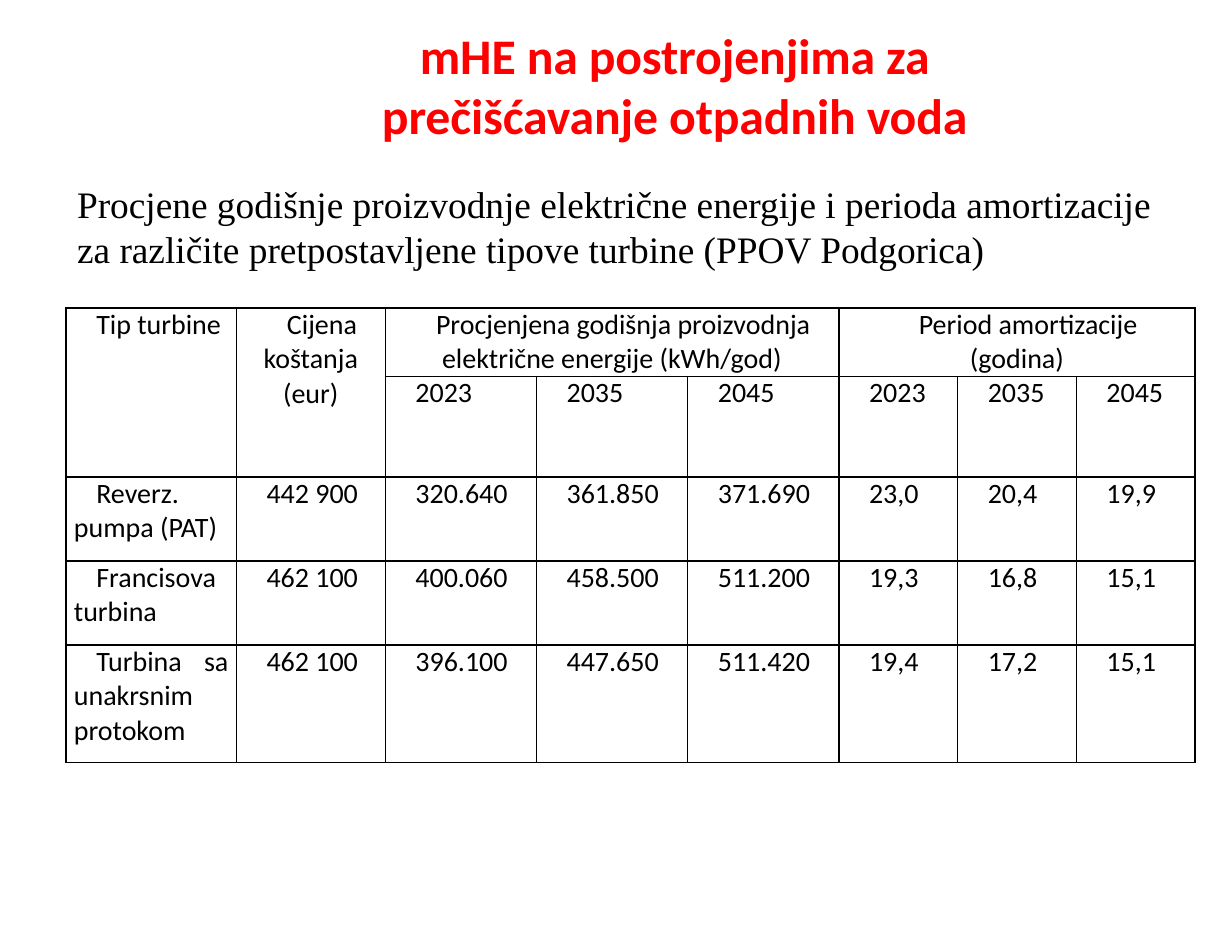
from pptx import Presentation
from pptx.dml.color import RGBColor as RGB
from pptx.enum.text import MSO_ANCHOR as Anchor, MSO_AUTO_SIZE as Auto, PP_ALIGN as Align
from pptx.oxml import parse_xml
from pptx.oxml.ns import nsdecls
from pptx.util import Inches, Pt


def write(frame, text, size=18, font="Calibri", color="000000", bold=False,
          align=Align.LEFT, left=0, first=0, space=0):
    frame.word_wrap = True
    par = frame.paragraphs[0]
    par.alignment = align
    props = par._p.get_or_add_pPr()
    props.set("marL", str(Inches(left)))
    props.set("indent", str(Inches(first)))
    run = par.add_run()
    run.text = text
    run.font.size, run.font.name, run.font.bold = Pt(size), font, bold
    run.font.color.rgb = RGB.from_string(color)
    if space:
        run._r.get_or_add_rPr().set("spc", str(space))


def frame_cell(cell, color="000000", width=1):
    cell.fill.background()
    for spot, side in enumerate("LRTB"):
        cell._tc.get_or_add_tcPr().insert(spot, parse_xml(
            f'<a:ln{side} {nsdecls("a")} w="{Pt(width)}"><a:solidFill>'
            f'<a:srgbClr val="{color}"/></a:solidFill></a:ln{side}>'))


deck = Presentation()
deck.slide_width, deck.slide_height = Inches(11), Inches(8.5)
slide = deck.slides.add_slide(deck.slide_layouts[5])
edge = Inches(0.59)

# Title
title = slide.shapes.title
title.left, title.top = Inches(1.83), Inches(0.01)
title.width, title.height = Inches(7.59), Inches(1.29)
head = title.text_frame
head.margin_left = head.margin_right = head.margin_bottom = 0
head.margin_top = Inches(0.21)
head.vertical_anchor = Anchor.TOP
head.auto_size = Auto.SHAPE_TO_FIT_TEXT
write(head, "mHE na postrojenjima za prečišćavanje otpadnih voda", size=32,
      color="FF0000", bold=True, align=Align.CENTER, left=0.8, space=-10)

# Turbine table
cols = [1.52, 1.33] + [1.35] * 3 + [1.06] * 3
rows = [0.61, 0.9, 0.75, 0.75, 1.05]
years = ["2023", "2035", "2045"]
data = [
    ["Tip turbine", "Cijena koštanja (eur)",
     "Procjenjena godišnja proizvodnja električne energije (kWh/god)", "", "",
     "Period amortizacije (godina)", "", ""],
    ["", ""] + years * 2,
    ["Reverz. pumpa (PAT)", "442 900", "320.640", "361.850", "371.690",
     "23,0", "20,4", "19,9"],
    ["Francisova turbina", "462 100", "400.060", "458.500", "511.200",
     "19,3", "16,8", "15,1"],
    ["Turbina sa unakrsnim protokom", "462 100", "396.100", "447.650", "511.420",
     "19,4", "17,2", "15,1"],
]
table = slide.shapes.add_table(len(rows), len(cols), edge, Inches(2.75),
                               Inches(sum(cols)), Inches(sum(rows))).table
table.first_row = table.horz_banding = False
for col, width in zip(table.columns, cols):
    col.width = Inches(width)
for row, height in zip(table.rows, rows):
    row.height = Inches(height)

for r, line in enumerate(data):
    for c, text in enumerate(line):
        cell = table.cell(r, c)
        cell.margin_left = cell.margin_right = Inches(0.07)
        cell.margin_top = cell.margin_bottom = 0
        frame_cell(cell)
        if text:
            mid = r == 0 and c > 0
            write(cell.text_frame, text, first=0.2,
                  align=Align.CENTER if mid else Align.JUSTIFY)

# Header spans
for c in (0, 1):
    table.cell(0, c).merge(table.cell(1, c))
for c in (2, 5):
    table.cell(0, c).merge(table.cell(0, c + 2))

# Lead text
lead = slide.shapes.add_textbox(edge, Inches(1.57), Inches(9.83), Inches(0.91))
lead.text_frame.auto_size = Auto.SHAPE_TO_FIT_TEXT
write(lead.text_frame,
      "Procjene godišnje proizvodnje električne energije i perioda amortizacije "
      "za različite pretpostavljene tipove turbine (PPOV Podgorica)",
      size=24, font="Times New Roman")

deck.save("out.pptx")
